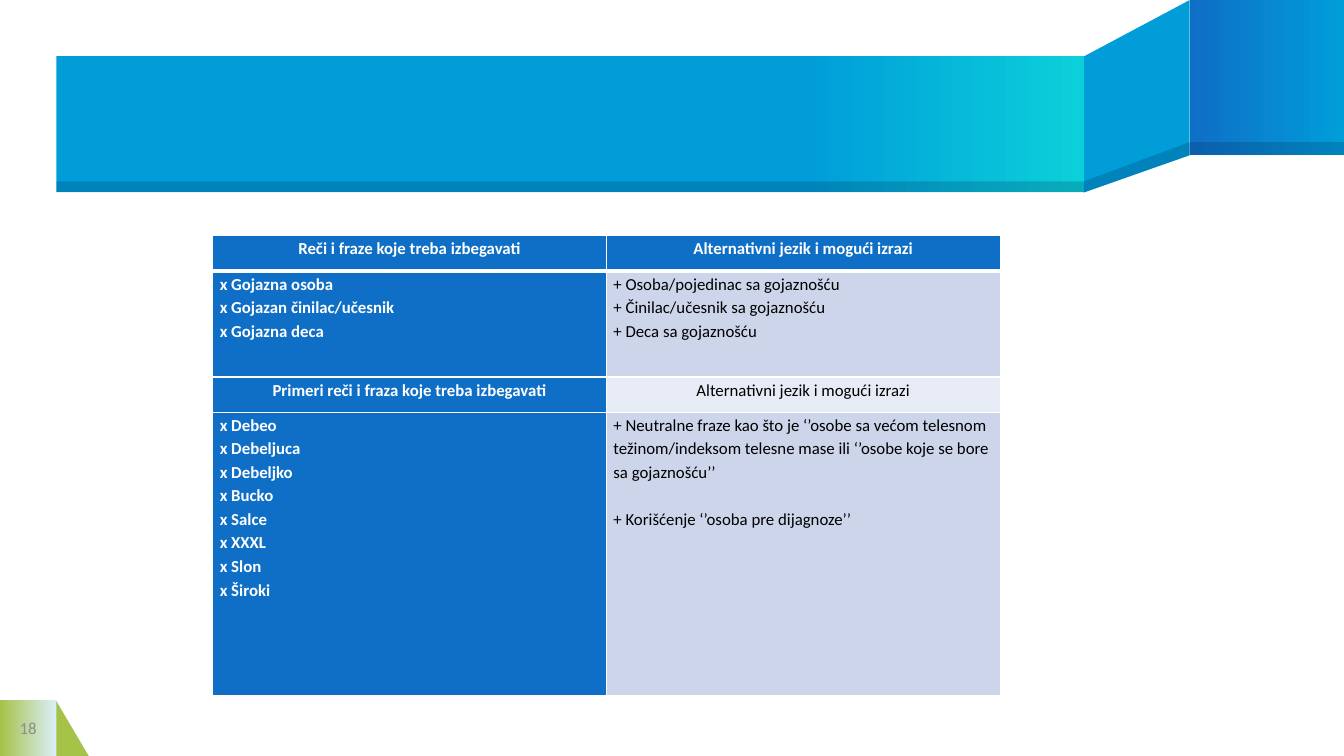
from lxml.etree import SubElement
from pptx import Presentation
from pptx.dml.color import RGBColor
from pptx.enum.shapes import MSO_SHAPE
from pptx.enum.text import MSO_ANCHOR, PP_ALIGN
from pptx.oxml.ns import qn
from pptx.util import Inches, Pt

BLUE, SKY, TURQUOISE, GREEN = "0F6FC6", "009DD9", "0BD0D9", "A5C249"
PALE, SHADE, WHITE, BLACK = "DBEFF9", "001F46", "FFFFFF", "000000"
BAND, LIGHT_BAND = "CCD5EA", "E7EBF5"

HEADER_HEIGHT = 0.35
TABLE_ROWS = [
    (HEADER_HEIGHT, BLUE, ["Reči i fraze koje treba izbegavati"],
     ["Alternativni jezik i mogući izrazi"]),
    (1.05, BAND, ["x Gojazna osoba", "x Gojazan činilac/učesnik", "x Gojazna deca"],
     ["+ Osoba/pojedinac sa gojaznošću", "+ Činilac/učesnik sa gojaznošću",
      "+ Deca sa gojaznošću"]),
    (HEADER_HEIGHT, LIGHT_BAND, ["Primeri reči i fraza koje treba izbegavati"],
     ["Alternativni jezik i mogući izrazi"]),
    (2.81, BAND, ["x Debeo", "x Debeljuca", "x Debeljko", "x Bucko", "x Salce",
                  "x XXXL", "x Slon", "x Široki"],
     ["+ Neutralne fraze kao što je ‘’osobe sa većom telesnom težinom/indeksom "
      "telesne mase ili ‘’osobe koje se bore sa gojaznošću’’",
      "+ Korišćenje ‘’osoba pre dijagnoze’’"]),
]


def color(value):
    return RGBColor.from_string(value)


def paint(shape, value, alpha=None):
    shape.shadow.inherit = False
    shape.line.fill.background()
    shape.fill.solid()
    shape.fill.fore_color.rgb = color(value)
    if alpha:
        tint = shape.fill._xPr.find(".//" + qn("a:srgbClr"))
        SubElement(tint, qn("a:alpha"), val=str(alpha * 1000))


def add_block(page, left, top, width, height, value, alpha=None, kind=MSO_SHAPE.RECTANGLE):
    block = page.shapes.add_shape(kind, Inches(left), Inches(top), Inches(width), Inches(height))
    paint(block, value, alpha)
    return block


def add_gradient_block(page, left, top, width, height, first, last, start=0):
    block = add_block(page, left, top, width, height, first)
    block.fill.gradient()
    block.fill.gradient_angle = 0
    for stop, value, position in zip(block.fill.gradient_stops, (first, last), (start, 1)):
        stop.color.rgb = color(value)
        stop.position = position


def add_outline(page, points, value, alpha=None):
    corners = [(Inches(x), Inches(y)) for x, y in points]
    builder = page.shapes.build_freeform(*corners[0])
    builder.add_line_segments(corners[1:], close=True)
    paint(builder.convert_to_shape(), value, alpha)


def add_ribbon(page, left, top, right, bottom):
    fold, end = 10.75, 11.8
    end_bottom, end_shade, bar_shade = 1.54, 1.41, 1.8
    add_outline(page, [(end, 0), (fold, top), (fold, bottom), (end, end_bottom)], SKY)
    add_gradient_block(page, end, 0, right - end, end_bottom, BLUE, SKY)
    add_gradient_block(page, left, top, fold - left, bottom - top, SKY, TURQUOISE, 0.73)
    add_outline(page, [(end, end_shade), (fold, bar_shade), (fold, bottom), (end, end_bottom)],
                SHADE, 20)
    add_block(page, end, end_shade, right - end, end_bottom - end_shade, SHADE, 20)
    add_block(page, left, bar_shade, fold - left, bottom - bar_shade, SHADE, 20)


def add_page_number(page, left, top, size, number):
    add_block(page, left + size - 0.01, top, 0.33, size, GREEN, kind=MSO_SHAPE.RIGHT_TRIANGLE)
    add_gradient_block(page, left, top, size, size, GREEN, PALE)
    box = page.shapes.add_textbox(Inches(left), Inches(top), Inches(size), Inches(size))
    frame = box.text_frame
    frame.word_wrap = True
    frame.vertical_anchor = MSO_ANCHOR.MIDDLE
    frame.margin_left = frame.margin_right = frame.margin_top = frame.margin_bottom = 0
    para = frame.paragraphs[0]
    para.text = number
    para.alignment = PP_ALIGN.CENTER
    style_font(para, "8C8C8C")


def style_font(para, value, bold=False):
    para.font.name = "Calibri"
    para.font.size = Pt(12)
    para.font.bold = bold
    para.font.color.rgb = color(value)


def set_borders(cell, top, bottom):
    properties = cell._tc.get_or_add_tcPr()
    for side, width in (("L", 1), ("R", 1), ("T", top), ("B", bottom)):
        line = SubElement(properties, qn("a:ln" + side), w=str(Pt(width)))
        fill = SubElement(line, qn("a:solidFill"))
        SubElement(fill, qn("a:srgbClr"), val=WHITE)


def fill_cell(cell, lines, value, centered, gap):
    cell.margin_left = cell.margin_right = Inches(0.07)
    cell.margin_top = cell.margin_bottom = 0
    cell.fill.solid()
    cell.fill.fore_color.rgb = color(value)
    frame = cell.text_frame
    for index, text in enumerate(lines):
        para = frame.add_paragraph() if index else frame.paragraphs[0]
        para.text = text
        para.line_spacing = 1.15
        para.alignment = PP_ALIGN.CENTER if centered else PP_ALIGN.LEFT
        if index:
            para.space_before = Pt(gap)
        dark = value == BLUE
        style_font(para, WHITE if dark else BLACK, dark)


def add_phrase_table(page, left, top, width):
    height = sum(row[0] for row in TABLE_ROWS)
    table = page.shapes.add_table(len(TABLE_ROWS), 2, Inches(left), Inches(top),
                                  Inches(width), Inches(height)).table
    table.horz_banding = False
    last = len(TABLE_ROWS) - 1
    for index, (row_height, band, avoid, prefer) in enumerate(TABLE_ROWS):
        table.rows[index].height = Inches(row_height)
        centered = row_height == HEADER_HEIGHT
        for column, (lines, value) in enumerate(((avoid, BLUE), (prefer, band))):
            cell = table.cell(index, column)
            set_borders(cell, 3 if index == 1 else 1, 3 if index == 0 else 1)
            gap = 17 if index == last and column == 1 else 0
            fill_cell(cell, lines, value, centered, gap)


def main():
    deck = Presentation()
    deck.slide_width, deck.slide_height = Inches(13.33), Inches(7.5)
    page = deck.slides.add_slide(deck.slide_layouts[6])
    add_ribbon(page, 0.56, 0.56, 13.33, 1.91)
    add_page_number(page, 0, 6.94, 0.56, "18")
    add_phrase_table(page, 2.11, 2.34, 7.81)
    deck.save("out.pptx")


if __name__ == "__main__":
    main()
